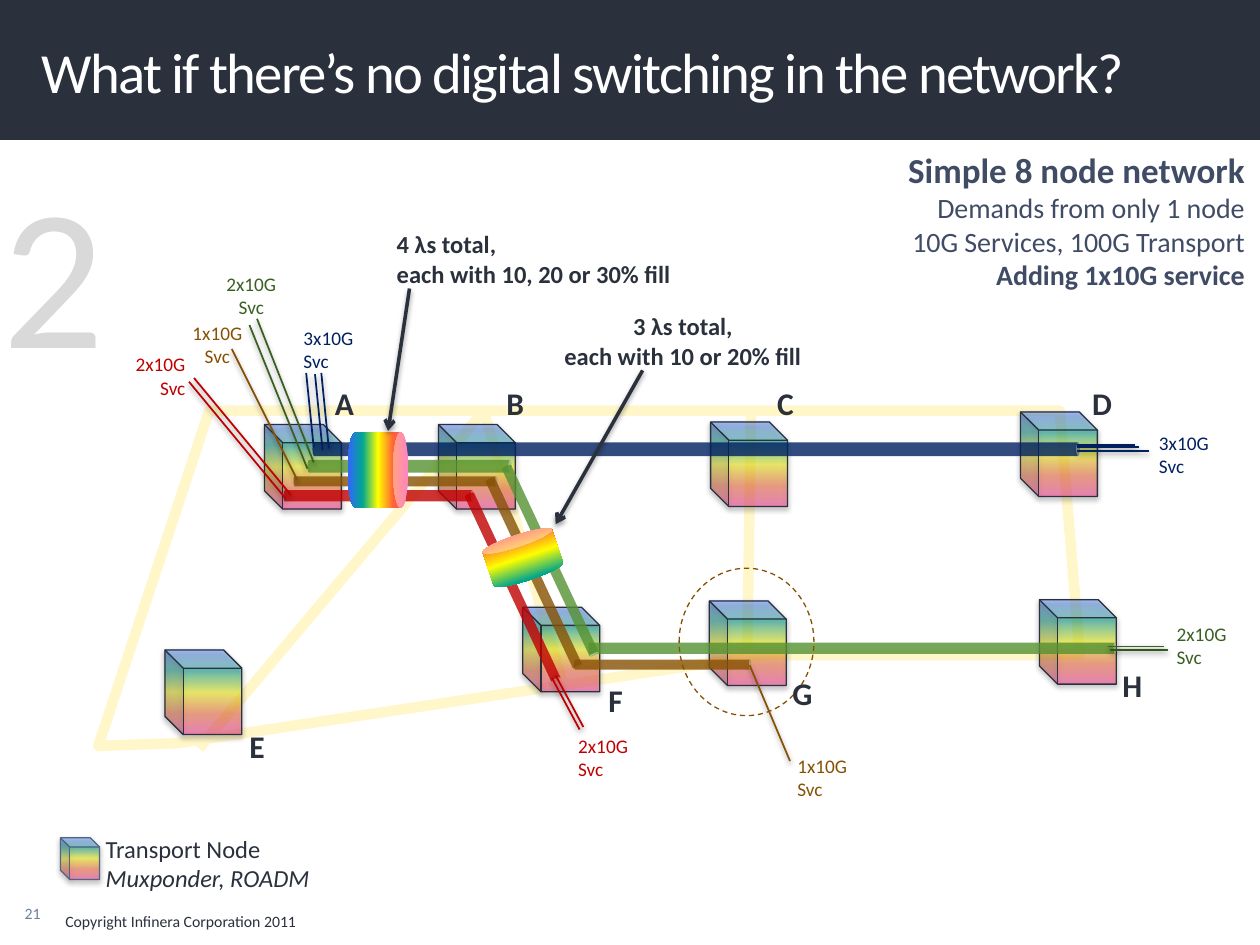
from lxml import etree
from pptx import Presentation
from pptx.dml.color import RGBColor
from pptx.enum.dml import MSO_LINE
from pptx.enum.shapes import MSO_CONNECTOR, MSO_SHAPE
from pptx.enum.text import MSO_ANCHOR, MSO_AUTO_SIZE, PP_ALIGN
from pptx.oxml.ns import qn
from pptx.util import Inches, Pt

LEFT, CENTER, RIGHT = PP_ALIGN.LEFT, PP_ALIGN.CENTER, PP_ALIGN.RIGHT
TOP, MIDDLE = MSO_ANCHOR.TOP, MSO_ANCHOR.MIDDLE
FIT, NO_FIT = MSO_AUTO_SIZE.SHAPE_TO_FIT_TEXT, MSO_AUTO_SIZE.NONE
CUBE, CAN, OVAL, RECT = MSO_SHAPE.CUBE, MSO_SHAPE.CAN, MSO_SHAPE.OVAL, MSO_SHAPE.RECTANGLE
STRAIGHT, DASH = MSO_CONNECTOR.STRAIGHT, MSO_LINE.DASH

COLORS = {
    "ink": "2A313D", "white": "FFFFFF", "heading": "404C65", "page": "6E7F9B",
    "step": "D9D9D9", "fiber": "FFF7C9", "legend": "526384",
    "green": "559132", "dark green": "396021", "blue": "002060",
    "red": "C00000", "brown": "865104",
}
SPECTRUM = ["FF3399", "FF6633", "FFFF00", "01A78F", "3366FF"]
DIAGONAL = 334.9

FIBER_RING = [(1.4, 5.9), (6.05, 5.2), (8.57, 5.2), (8.41, 3.26), (1.66, 3.26), (0.78, 5.92)]
FIBER_LINKS = [(3.84, 3.26, 1.58, 5.94), (5.96, 3.26, 5.93, 5.24), (3.84, 3.26, 4.46, 5.4)]

# node: cube left, cube top, label left, label top
NODES = {
    "A": (2.1, 3.37, 2.56, 3), "B": (3.48, 3.37, 3.92, 3),
    "E": (1.31, 5.16, 1.88, 5.72), "F": (4.15, 4.82, 4.73, 5.36),
    "G": (5.63, 4.77, 6.19, 5.3), "H": (8.25, 4.76, 8.81, 5.24),
    "D": (8.1, 3.27, 8.57, 3), "C": (5.64, 3.35, 6.07, 3),
}
# color, frame before rotation, rotation
WAVELENGTHS = [
    ("green", (3.2, 2.89, 0.1, 1.62), 90), ("blue", (5.47, 0.52, 0.11, 6.09), 90),
    ("red", (2.96, 3.18, 0.09, 1.51), 90), ("red", (4.03, 3.84, 0.08, 1.64), DIAGONAL),
    ("green", (6.72, 3.05, 0.09, 4.19), 90), ("green", (4.33, 3.62, 0.08, 1.66), DIAGONAL),
    ("brown", (3.1, 3.01, 0.08, 1.62), 90), ("brown", (4.2, 3.72, 0.08, 1.66), DIAGONAL),
    ("brown", (5.22, 4.57, 0.08, 1.41), 90),
]
SERVICE_LINES = {
    "dark green": [(2.44, 3.72, 1.98, 2.58), (2.49, 3.67, 2.04, 2.53),
                   (9.27, 5.16, 8.81, 5.16), (9.24, 5.13, 8.79, 5.13)],
    "blue": [(2.49, 3.55, 2.43, 2.96), (2.56, 3.57, 2.5, 2.97), (2.61, 3.56, 2.55, 2.96),
             (9.01, 3.53, 8.55, 3.53), (9.04, 3.55, 8.55, 3.55), (9.12, 3.58, 8.55, 3.58)],
    "red": [(2.31, 3.93, 1.54, 3), (2.27, 3.96, 1.5, 3.03),
            (4.63, 5.77, 4.41, 5.36), (4.6, 5.79, 4.38, 5.38)],
    "brown": [(6.27, 6.04, 5.95, 5.28), (2.36, 3.81, 1.84, 2.77)],
}
SERVICES = [
    ("2x10G Svc", 1.66, 2.11, "dark green", CENTER), ("3x10G Svc", 2.31, 2.54, "blue", LEFT),
    ("2x10G Svc", 0.9, 2.75, "red", RIGHT), ("2x10G Svc", 9.24, 4.89, "dark green", LEFT),
    ("2x10G Svc", 4.49, 5.78, "red", LEFT), ("3x10G Svc", 9.1, 3.37, "blue", LEFT),
    ("1x10G Svc", 1.39, 2.5, "brown", CENTER), ("1x10G Svc", 6.23, 5.94, "brown", LEFT),
]


def rgb(name):
    return RGBColor.from_string(COLORS[name])


def add_xml(parent, tag, **attributes):
    return etree.SubElement(parent, qn(tag), {k: str(v) for k, v in attributes.items()})


def set_effects(shape, shadowed):
    """Replace the theme shadow by a soft one below the shape, or by none."""
    effects = add_xml(shape._element.spPr, "a:effectLst")
    if shadowed:
        shadow = add_xml(effects, "a:outerShdw", blurRad=Pt(3.1), dist=Pt(1.6),
                         dir=5400000, rotWithShape=0)
        black = add_xml(shadow, "a:srgbClr", val="000000")
        add_xml(black, "a:alpha", val=38000)


def set_outline(shape, color, width):
    shape.line.color.rgb = rgb(color)
    shape.line.width = Pt(width)


def add_preset(slide, kind, frame, fill=None, outline=None, width=0.75, shadowed=False):
    shape = slide.shapes.add_shape(kind, *map(Inches, frame))
    if fill:
        shape.fill.solid()
        shape.fill.fore_color.rgb = rgb(fill)
    else:
        shape.fill.background()
    if outline:
        set_outline(shape, outline, width)
    else:
        shape.line.fill.background()
    set_effects(shape, shadowed)
    return shape


def flip(shape, *axes):
    for axis in axes:
        shape._element.spPr.xfrm.set(axis, "1")


def fill_spectrum(shape, angle, opacity=100):
    """Fill with the rainbow; the angle runs counter-clockwise."""
    shape.fill.gradient()
    shape.fill.gradient_angle = angle
    stops = shape._element.spPr.find(".//" + qn("a:gsLst"))
    for stop in list(stops):
        stops.remove(stop)
    for index, value in enumerate(SPECTRUM):
        stop = add_xml(stops, "a:gs", pos=index * 25000)
        color = add_xml(stop, "a:srgbClr", val=value)
        if opacity < 100:
            add_xml(color, "a:alpha", val=opacity * 1000)


def add_node(slide, left, top, width=0.61, height=0.67, outline="ink"):
    cube = add_preset(slide, CUBE, (left, top, width, height), outline=outline, shadowed=True)
    cube.adjustments[0] = 0.236
    fill_spectrum(cube, 90, opacity=50)
    flip(cube, "flipH")


def add_wavelength(slide, color, frame, rotation):
    pipe = add_preset(slide, CAN, frame, fill=color)
    add_xml(pipe._element.spPr.find(".//" + qn("a:srgbClr")), "a:alpha", val=80000)
    pipe.rotation = rotation
    flip(pipe, *(("flipH", "flipV") if rotation == DIAGONAL else ("flipH",)))


def add_bundle(slide, frame, rotation):
    bundle = add_preset(slide, CAN, frame)
    fill_spectrum(bundle, 270)
    bundle.rotation = rotation
    flip(bundle, "flipH")


def add_line(slide, ends, color, width, shadowed=True, arrow=False):
    line = slide.shapes.add_connector(STRAIGHT, *map(Inches, ends))
    set_outline(line, color, width)
    if arrow:
        add_xml(line.line._get_or_add_ln(), "a:tailEnd", type="arrow")
    set_effects(line, shadowed)


def add_fiber(slide):
    points = [tuple(map(Inches, point)) for point in FIBER_RING]
    builder = slide.shapes.build_freeform(*points[0])
    builder.add_line_segments(points[1:], close=True)
    ring = builder.convert_to_shape()
    ring.fill.background()
    set_outline(ring, "fiber", 6)
    set_effects(ring, False)
    for ends in FIBER_LINKS:
        add_line(slide, ends, "fiber", 6, shadowed=False)


def add_text(slide, frame, paragraphs, size, color="ink", align=LEFT, anchor=TOP,
             wrap=True, fit=FIT, **font):
    """Each paragraph is a list of (text, font overrides) runs."""
    box = slide.shapes.add_textbox(*map(Inches, frame))
    text = box.text_frame
    for name, value in {"word_wrap": wrap, "auto_size": fit, "vertical_anchor": anchor}.items():
        setattr(text, name, value)
    for index, runs in enumerate(paragraphs):
        paragraph = text.paragraphs[0] if index == 0 else text.add_paragraph()
        paragraph.alignment = align
        for words, changes in runs:
            run = paragraph.add_run()
            run.text = words
            run.font.color.rgb = rgb(color)
            look = {"name": "Calibri", "size": Pt(size), **font, **changes}
            for name, value in look.items():
                setattr(run.font, name, value)
    return text


def add_title(slide):
    add_preset(slide, RECT, (0, 0, 10, 1.11), fill="ink")
    title = add_text(slide, (0.33, 0.07, 9.33, 1.02),
                     [[("What if there’s no digital switching in the network?", {})]],
                     32.4, "white", anchor=MIDDLE, fit=NO_FIT)
    title.margin_left = 0
    title.paragraphs[0].line_spacing = Pt(36)
    title.paragraphs[0].runs[0].font._element.set("spc", "-100")


def add_callout(slide, frame, lines, arrow, align):
    add_text(slide, frame, [[(line, {})] for line in lines], 14, align=align, bold=True)
    add_line(slide, arrow, "ink", 2, arrow=True)


def main():
    prs = Presentation()
    prs.slide_width, prs.slide_height = Inches(10), Inches(7.5)
    slide = prs.slides.add_slide(prs.slide_layouts[6])

    add_text(slide, (0, 7.12, 0.42, 0.25), [[("21", {})]], 9, "page", RIGHT, MIDDLE, fit=NO_FIT)
    add_fiber(slide)
    for left, top, _, _ in NODES.values():
        add_node(slide, left, top)
    add_title(slide)
    add_text(slide, (0.42, 7.19, 4.57, 0.3),
             [[("Copyright Infinera Corporation 2011", {})]], 9, fit=NO_FIT)
    add_text(slide, (-0.08, 1.12, 1.02, 2.04), [[("2", {})]], 115, "step", wrap=False)

    for wavelength in WAVELENGTHS:
        add_wavelength(slide, *wavelength)
    for color, lines in SERVICE_LINES.items():
        for ends in lines:
            add_line(slide, ends, color, 1)
    for words, left, top, color, align in SERVICES:
        add_text(slide, (left, top, 0.67, 0.47), [[(words, {})]], 11, color, align)
    highlight = add_preset(slide, OVAL, (5.39, 4.51, 1.07, 1.17), outline="brown")
    highlight.line.dash_style = DASH
    add_bundle(slide, (2.7, 3.49, 0.6, 0.48), 90)
    add_bundle(slide, (3.86, 4.24, 0.58, 0.37), 341.7)

    add_callout(slide, (3.05, 1.77, 2.58, 0.57),
                ["4 λs total,", "each with 10, 20 or 30% fill"], (3.25, 2.29, 3.08, 3.42), LEFT)
    add_callout(slide, (4.13, 2.42, 2.58, 0.57),
                ["3 λs total,", "each with 10 or 20% fill"], (5.1, 2.94, 4.41, 4.16), CENTER)
    add_text(slide, (6.96, 1.13, 3.02, 1.22),
             [[("Simple 8 node network", {"size": Pt(20), "bold": True})],
              [("Demands from only 1 node", {})],
              [("10G Services, 100G Transport ", {}), ("Adding 1x10G service", {"bold": True})]],
             16, "heading", RIGHT, fit=NO_FIT)

    for letter, (_, _, left, top) in NODES.items():
        add_text(slide, (left, top, 0.35, 0.4), [[(letter, {})]], 18, wrap=False, bold=True)
    add_node(slide, 0.48, 6.65, 0.31, 0.33, "legend")
    add_text(slide, (0.74, 6.57, 1.85, 0.57),
             [[("Transport Node", {})], [("Muxponder, ROADM", {"italic": True})]],
             14, wrap=False)
    prs.save("out.pptx")


if __name__ == "__main__":
    main()
